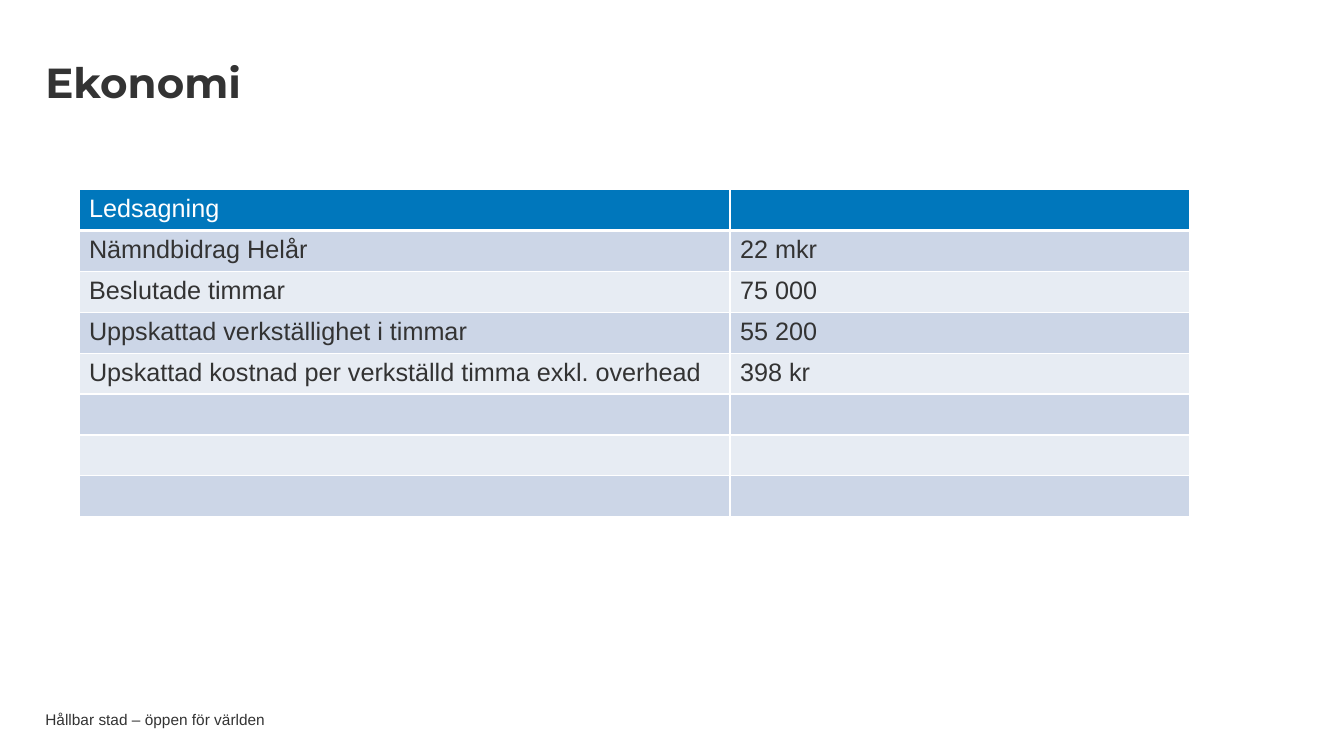
from dataclasses import dataclass

from lxml import etree
from pptx import Presentation
from pptx.dml.color import RGBColor
from pptx.enum.text import MSO_ANCHOR
from pptx.oxml.ns import qn
from pptx.slide import Slide
from pptx.table import _Cell
from pptx.util import Pt

MIDDLE = MSO_ANCHOR.MIDDLE

WHITE = RGBColor(0xFF, 0xFF, 0xFF)
DARK_GREY = RGBColor(0x33, 0x33, 0x33)
HEADER_BLUE = RGBColor(0x00, 0x77, 0xBC)
BAND_DARK = RGBColor(0xCC, 0xD6, 0xE7)
BAND_LIGHT = RGBColor(0xE7, 0xEC, 0xF3)

TABLE_LEFT, TABLE_TOP = 56.4, 135.5
COLUMN_WIDTHS = (465, 328.5)
ROW_HEIGHT = 29.2
TABLE_ROWS = (
    ("Ledsagning", ""),
    ("Nämndbidrag Helår", "22 mkr"),
    ("Beslutade timmar", "75 000"),
    ("Uppskattad verkställighet i timmar", "55 200"),
    ("Upskattad kostnad per verkställd timma exkl. overhead", "398 kr"),
    ("", ""),
    ("", ""),
    ("", ""),
)


@dataclass(frozen=True)
class Label:
    text: str
    left: float
    top: float
    width: float
    height: float
    font_name: str
    font_size: float
    bold: bool = False
    inset: float = 0
    line_spacing: float = 1.0


LABELS = (
    Label("Hållbar stad – öppen för världen", 32.4, 508.3, 680.4, 11.5, "Arial", 11),
    Label("Ekonomi", 32.4, 31.7, 722.2, 58.3, "Montserrat", 30,
          bold=True, inset=3.6, line_spacing=0.9),
)


def add_label(slide: Slide, label: Label) -> None:
    shape = slide.shapes.add_textbox(
        Pt(label.left), Pt(label.top), Pt(label.width), Pt(label.height))
    frame = shape.text_frame
    frame.word_wrap = True
    frame.vertical_anchor = MIDDLE
    frame.margin_left = frame.margin_right = 0
    frame.margin_top = frame.margin_bottom = Pt(label.inset)
    frame.text = label.text
    paragraph = frame.paragraphs[0]
    paragraph.line_spacing = label.line_spacing
    font = paragraph.runs[0].font
    font.name = label.font_name
    font.size = Pt(label.font_size)
    font.bold = label.bold
    font.color.rgb = DARK_GREY


def add_borders(cell: _Cell, bottom_width: float) -> None:
    """Draw white cell edges, 1 pt wide except for the bottom one."""
    properties = cell._tc.get_or_add_tcPr()
    for tag, width in (("a:lnL", 1), ("a:lnR", 1), ("a:lnT", 1), ("a:lnB", bottom_width)):
        line = etree.SubElement(properties, qn(tag), w=str(Pt(width)))
        fill = etree.SubElement(line, qn("a:solidFill"))
        etree.SubElement(fill, qn("a:srgbClr"), val=str(WHITE))


def format_cell(cell: _Cell, text: str, row_index: int) -> None:
    is_header = row_index == 0
    add_borders(cell, 3 if is_header else 1)
    cell.fill.solid()
    band = BAND_DARK if row_index % 2 else BAND_LIGHT
    cell.fill.fore_color.rgb = HEADER_BLUE if is_header else band
    paragraph = cell.text_frame.paragraphs[0]
    paragraph.text = text
    paragraph.font.size = Pt(18)
    for run in paragraph.runs:
        run.font.name = "Arial"
        run.font.size = Pt(18)
        run.font.bold = False
        run.font.color.rgb = WHITE if is_header else DARK_GREY


def add_economy_table(slide: Slide) -> None:
    table = slide.shapes.add_table(
        len(TABLE_ROWS), len(COLUMN_WIDTHS), Pt(TABLE_LEFT), Pt(TABLE_TOP),
        Pt(sum(COLUMN_WIDTHS)), Pt(ROW_HEIGHT * len(TABLE_ROWS))).table
    for column, width in zip(table.columns, COLUMN_WIDTHS):
        column.width = Pt(width)
    for row_index, texts in enumerate(TABLE_ROWS):
        table.rows[row_index].height = Pt(ROW_HEIGHT)
        for column_index, text in enumerate(texts):
            format_cell(table.cell(row_index, column_index), text, row_index)


def main() -> None:
    presentation = Presentation()
    presentation.slide_width = Pt(960)
    presentation.slide_height = Pt(540)
    slide = presentation.slides.add_slide(presentation.slide_layouts[6])
    for label in LABELS:
        add_label(slide, label)
    add_economy_table(slide)
    presentation.save("out.pptx")


if __name__ == "__main__":
    main()
